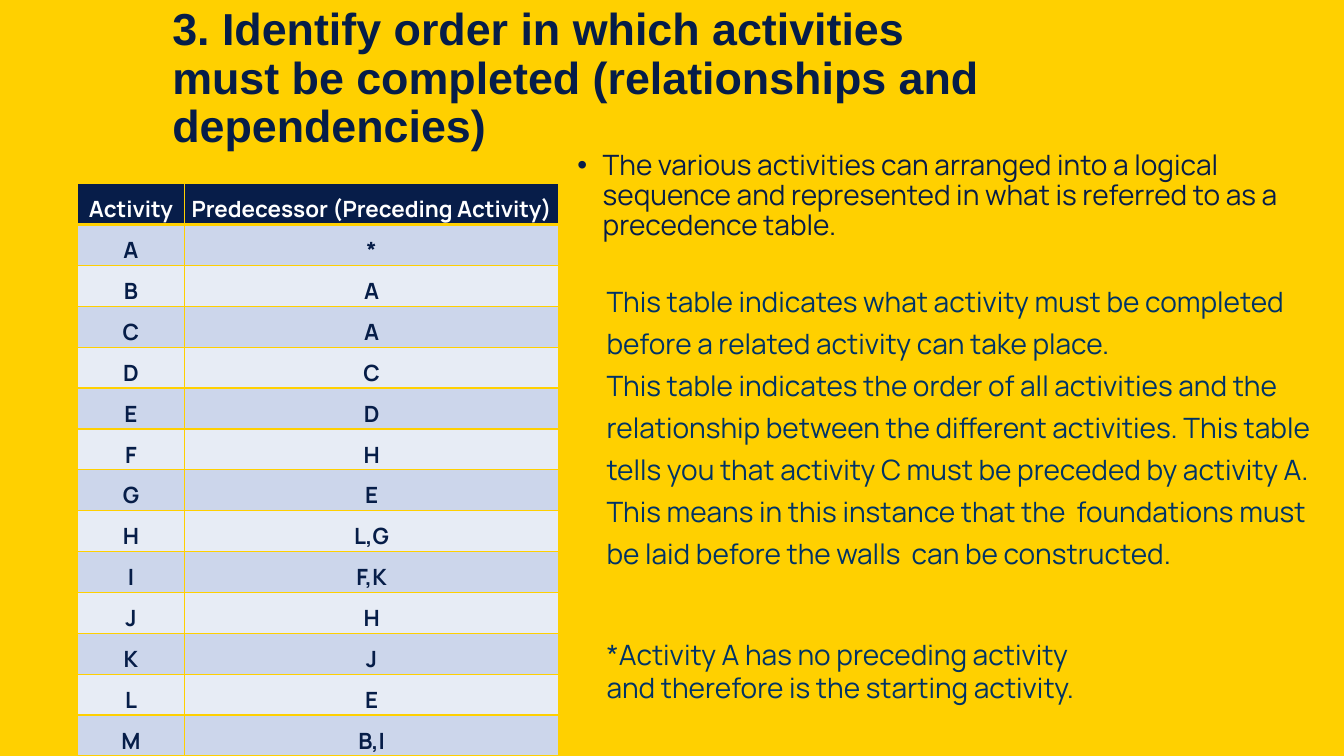
from dataclasses import dataclass

from lxml.etree import SubElement
from pptx import Presentation
from pptx.dml.color import RGBColor as Rgb
from pptx.enum.text import MSO_ANCHOR as Anchor, PP_ALIGN as Align
from pptx.oxml.ns import qn
from pptx.util import Pt


@dataclass(frozen=True)
class Theme:
    yellow: str = "FFD000"
    title_navy: str = "061D48"
    navy: str = "071D49"
    blue: str = "003366"
    white: str = "FFFFFF"
    bands: tuple = ("CCD6EB", "E7ECF5")
    heading_font: str = "Arial"
    body_font: str = "Manrope"
    title_size: int = 32
    body_size: int = 20
    table_size: int = 16


@dataclass(frozen=True)
class Box:
    left: float
    top: float
    width: float
    height: float

    def lengths(self):
        return Pt(self.left), Pt(self.top), Pt(self.width), Pt(self.height)


THEME = Theme()
TITLE = ("3. Identify order in which activities must be completed "
         "(relationships and dependencies)")
INTRO = ("The various activities can arranged into a logical sequence and "
         "represented in what is referred to as a precedence table.")
EXPLANATION = (
    "This table indicates what activity must be completed before a related "
    "activity can take place.",
    "This table indicates the order of all activities and the relationship "
    "between the different activities. This table tells you that activity C "
    "must be preceded by activity A.",
    "This means in this instance that the  foundations must be laid before "
    "the walls  can be constructed.",
)
FOOTNOTE = "*Activity A has no preceding activity\vand therefore is the starting activity."
HEADINGS = ("Activity", "Predecessor (Preceding Activity)")
PREDECESSORS = (
    ("A", "*"), ("B", "A"), ("C", "A"), ("D", "C"), ("E", "D"), ("F", "H"),
    ("G", "E"), ("H", "L,G"), ("I", "F,K"), ("J", "H"), ("K", "J"),
    ("L", "E"), ("M", "B,I"),
)


def style(paragraph, size, color, font=THEME.body_font, bold=False):
    for run in paragraph.runs:
        run.font.name = font
        run.font.size = Pt(size)
        run.font.bold = bold
        run.font.color.rgb = Rgb.from_string(color)


def add_text(slide, box, paragraphs, anchor=Anchor.TOP):
    frame = slide.shapes.add_textbox(*box.lengths()).text_frame
    frame.word_wrap = True
    frame.vertical_anchor = anchor
    frame.text = "\n".join(paragraphs)
    return frame.paragraphs


def add_title(slide, box):
    title, = add_text(slide, box, [TITLE], Anchor.MIDDLE)
    title.line_spacing = 0.9
    style(title, THEME.title_size, THEME.title_navy, THEME.heading_font, True)


def add_intro(slide, box):
    intro, = add_text(slide, box, [INTRO])
    intro.line_spacing = 0.9
    properties = intro._p.get_or_add_pPr()
    properties.set("marL", str(Pt(18)))
    properties.set("indent", str(Pt(-18)))
    SubElement(properties, qn("a:buFont"), typeface="Arial")
    SubElement(properties, qn("a:buChar"), char="•")
    style(intro, THEME.body_size, THEME.navy)


def add_explanation(slide, box):
    *statements, footnote = add_text(slide, box, [*EXPLANATION, FOOTNOTE])
    for statement in statements:
        statement.line_spacing = 1.25
        style(statement, THEME.body_size, THEME.blue)
    footnote.space_before = Pt(48)
    style(footnote, THEME.body_size, THEME.blue)


def add_borders(cell, bottom_width):
    properties = cell._tc.get_or_add_tcPr()
    widths = {"a:lnL": 1, "a:lnR": 1, "a:lnT": 1, "a:lnB": bottom_width}
    for position, (side, width) in enumerate(widths.items()):
        border = SubElement(properties, qn(side), w=str(Pt(width)))
        fill = SubElement(border, qn("a:solidFill"))
        SubElement(fill, qn("a:srgbClr"), val=THEME.yellow)
        properties.insert(position, border)


def fill_cell(cell, wording, fill, color, bottom_width):
    cell.margin_left = cell.margin_right = cell.margin_top = Pt(0.72)
    cell.margin_bottom = Pt(0)
    cell.vertical_anchor = Anchor.BOTTOM
    cell.fill.solid()
    cell.fill.fore_color.rgb = Rgb.from_string(fill)
    add_borders(cell, bottom_width)
    cell.text_frame.text = wording
    label = cell.text_frame.paragraphs[0]
    label.alignment = Align.CENTER
    style(label, THEME.table_size, color, bold=True)


def add_precedence_table(slide, box):
    entries = (HEADINGS, *PREDECESSORS)
    table = slide.shapes.add_table(len(entries), len(HEADINGS), *box.lengths()).table
    activity_width = 76.3
    table.columns[0].width = Pt(activity_width)
    table.columns[1].width = Pt(box.width - activity_width)
    for index, entry in enumerate(entries):
        table.rows[index].height = Pt(box.height / len(entries))
        if index == 0:
            look = THEME.navy, THEME.white, 3
        else:
            look = THEME.bands[(index - 1) % 2], THEME.title_navy, 1
        for column, wording in enumerate(entry):
            fill_cell(table.cell(index, column), wording, *look)


def main():
    deck = Presentation()
    deck.slide_width, deck.slide_height = Pt(960), Pt(540)
    slide = deck.slides.add_slide(deck.slide_layouts[6])
    slide.background.fill.solid()
    slide.background.fill.fore_color.rgb = Rgb.from_string(THEME.yellow)
    add_title(slide, Box(116, 26.6, 619.7, 60.5))
    add_intro(slide, Box(405.4, 104.4, 548.6, 59.8))
    add_explanation(slide, Box(426.2, 193.7, 521.3, 346.3))
    add_precedence_table(slide, Box(55.4, 131.2, 343.8, 408.8))
    deck.save("out.pptx")


if __name__ == "__main__":
    main()
